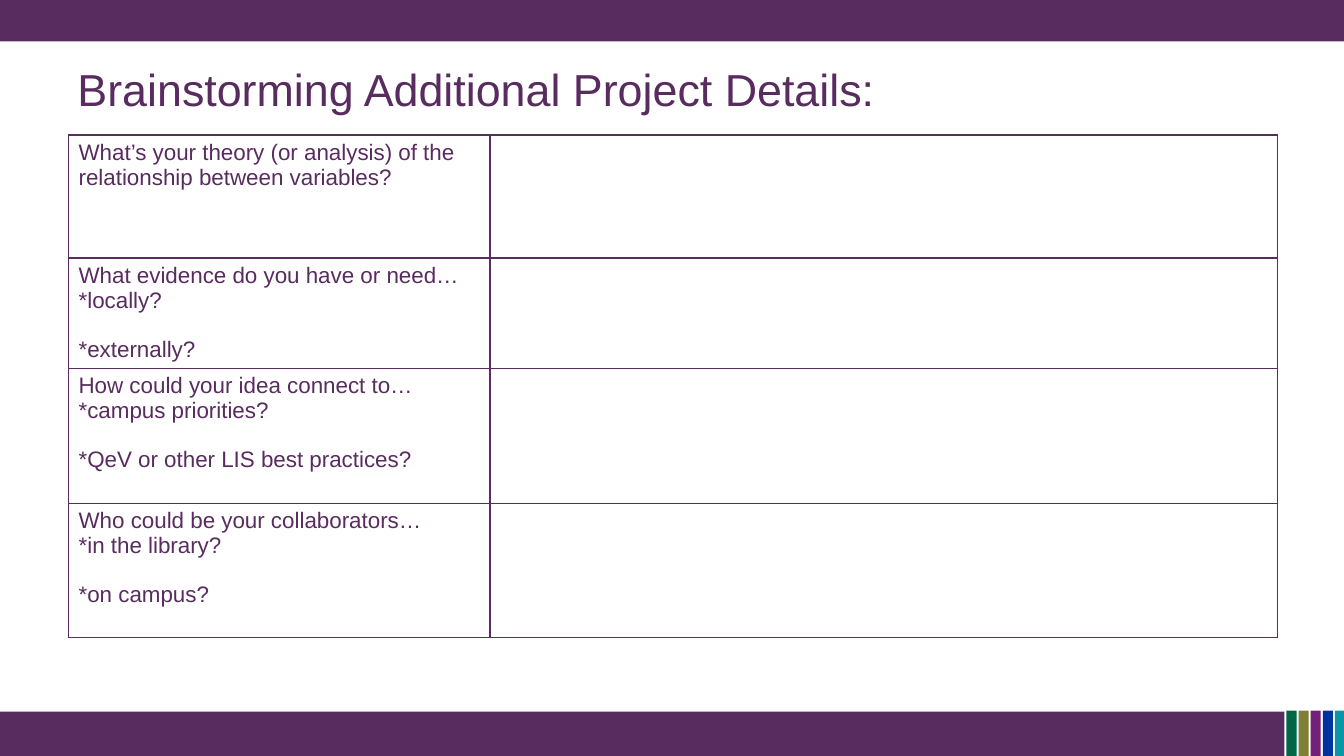
from dataclasses import dataclass

from lxml import etree
from pptx import Presentation
from pptx import util as u
from pptx.dml.color import RGBColor
from pptx.enum import shapes, text
from pptx.oxml import ns

PURPLE = "592C5F"
WHITE = "FFFFFF"
FONT = "Arial"
STRIPES = ["006647", "7E8034", "712177", "0033A0", "0996A9"]
COL_WIDTHS = [4.18, 7.81]


@dataclass
class Bar:
    left: float
    top: float
    width: float
    height: float
    color: str


@dataclass
class Question:
    lines: list[str]
    height: float


QUESTIONS = [
    Question(["What’s your theory (or analysis) of the relationship between variables?"], 1.22),
    Question(["What evidence do you have or need…", "*locally?", "*externally?"], 1.08),
    Question(["How could your idea connect to…", "*campus priorities?",
              "*QeV or other LIS best practices?"], 1.34),
    Question(["Who could be your collaborators…", "*in the library?", "*on campus?"], 1.33),
]


def rgb(color: str) -> RGBColor:
    return RGBColor.from_string(color)


def draw_bar(s, bar: Bar) -> None:
    sp = s.shapes.add_shape(shapes.MSO_SHAPE.RECTANGLE, u.Inches(bar.left), u.Inches(bar.top),
                            u.Inches(bar.width), u.Inches(bar.height))
    sp.shadow.inherit = False
    sp.fill.solid()
    sp.fill.fore_color.rgb = rgb(bar.color)
    sp.line.fill.background()


def format_text(p, size: float) -> None:
    for r in p.runs:
        r.font.name = FONT
        r.font.size = u.Pt(size)
        r.font.color.rgb = rgb(PURPLE)


def format_cell(cell) -> None:
    tc_pr = cell._tc.get_or_add_tcPr()
    for side in ("lnL", "lnR", "lnT", "lnB"):
        ln = etree.SubElement(tc_pr, ns.qn(f"a:{side}"), w=str(u.Pt(1)))
        fill = etree.SubElement(ln, ns.qn("a:solidFill"))
        etree.SubElement(fill, ns.qn("a:srgbClr"), val=PURPLE)
    cell.fill.solid()
    cell.fill.fore_color.rgb = rgb(WHITE)
    cell.margin_bottom = 0


def draw_title(s, title: str) -> None:
    sp = s.shapes.add_textbox(u.Inches(0.67), u.Inches(0.1), u.Inches(12), u.Inches(1.56))
    tf = sp.text_frame
    tf.word_wrap = True
    tf.vertical_anchor = text.MSO_ANCHOR.MIDDLE
    tf.text = title
    format_text(tf.paragraphs[0], 32)


def draw_table(s, questions: list[Question]) -> None:
    height = sum(q.height for q in questions)
    table = s.shapes.add_table(len(questions), len(COL_WIDTHS), u.Inches(0.68), u.Inches(1.34),
                               u.Inches(sum(COL_WIDTHS)), u.Inches(height)).table
    table.first_row = table.horz_banding = False
    for col, width in zip(table.columns, COL_WIDTHS):
        col.width = u.Inches(width)
    for i, q in enumerate(questions):
        table.rows[i].height = u.Inches(q.height)
        for cell in table.rows[i].cells:
            format_cell(cell)
        tf = table.cell(i, 0).text_frame
        tf.text = "\n".join(q.lines)
        for j, p in enumerate(tf.paragraphs):
            format_text(p, 16)
            if j == 2:  # writing space above the second prompt
                p.space_before = u.Pt(17.5)


def main() -> None:
    prs = Presentation()
    prs.slide_width, prs.slide_height = u.Inches(13.33), u.Inches(7.5)
    s = prs.slides.add_slide(prs.slide_layouts[6])

    # Footer band, colour stripes and header band
    draw_bar(s, Bar(0, 7.06, 12.74, 0.45, PURPLE))
    for i, color in enumerate(STRIPES):
        draw_bar(s, Bar(12.76 + 0.12 * i, 7.05, 0.1, 0.45, color))
    draw_bar(s, Bar(0, -0.01, 13.33, 0.42, PURPLE))

    # Title and question table
    draw_title(s, "Brainstorming Additional Project Details:")
    draw_table(s, QUESTIONS)

    prs.save("out.pptx")


if __name__ == "__main__":
    main()
